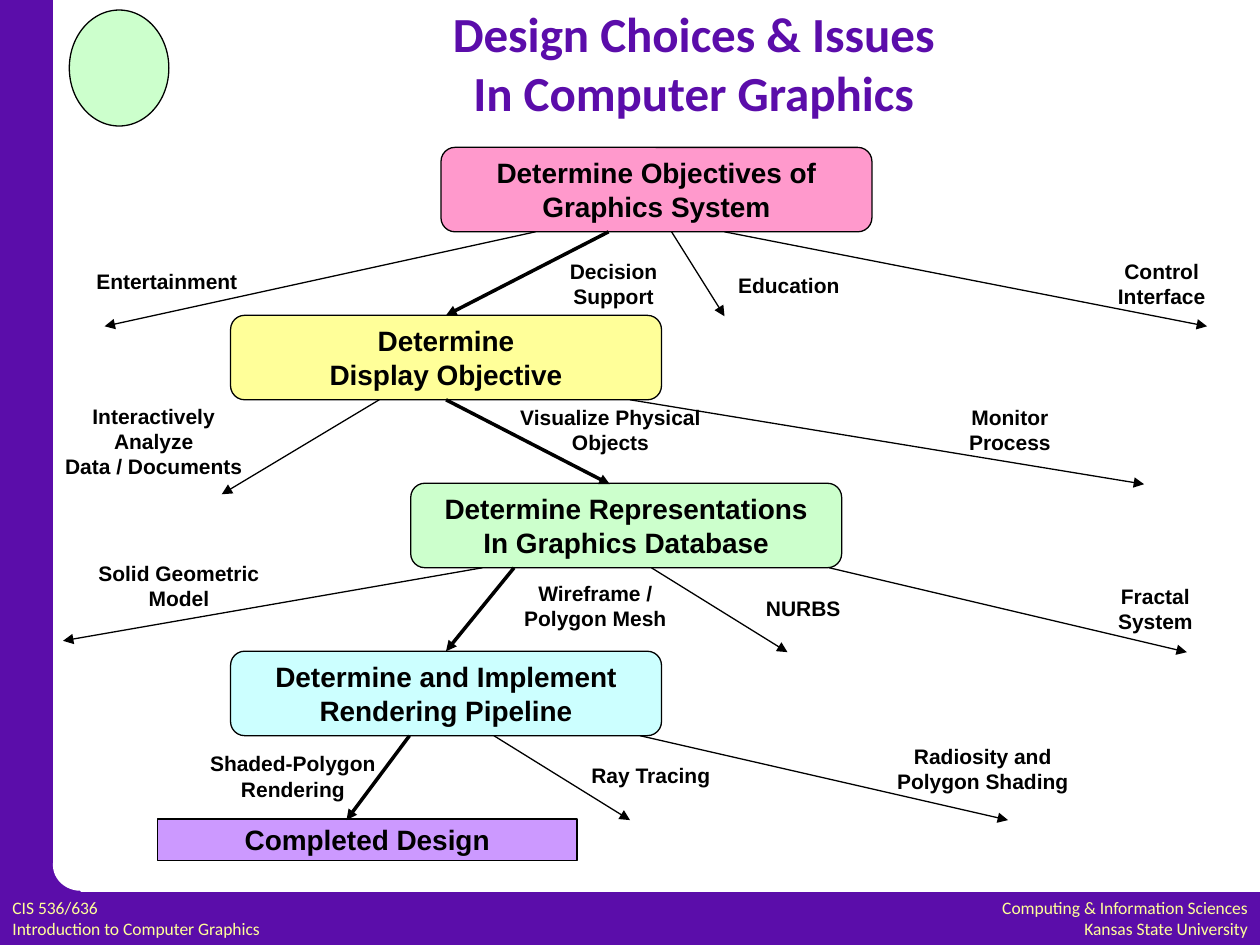
from pptx import Presentation
from pptx.dml.color import RGBColor
from pptx.enum.shapes import MSO_CONNECTOR, MSO_SHAPE
from pptx.enum.text import MSO_ANCHOR, PP_ALIGN
from pptx.oxml.ns import qn
from pptx.util import Inches, Pt
from lxml import etree

RECT, OVAL = MSO_SHAPE.RECTANGLE, MSO_SHAPE.OVAL
ROUND = MSO_SHAPE.FLOWCHART_ALTERNATE_PROCESS
STRAIGHT = MSO_CONNECTOR.STRAIGHT
LEFT, CENTER, RIGHT = PP_ALIGN.LEFT, PP_ALIGN.CENTER, PP_ALIGN.RIGHT
TOP, MIDDLE = MSO_ANCHOR.TOP, MSO_ANCHOR.MIDDLE

BLACK = RGBColor(0x00, 0x00, 0x00)
WHITE = RGBColor(0xFF, 0xFF, 0xFF)
PURPLE = RGBColor(0x5B, 0x0D, 0xAA)
CREAM = RGBColor(0xFF, 0xFF, 0x99)
PINK = RGBColor(0xFF, 0x99, 0xCC)
GREEN = RGBColor(0xCC, 0xFF, 0xCC)
CYAN = RGBColor(0xCC, 0xFF, 0xFF)
LILAC = RGBColor(0xCC, 0x99, 0xFF)

FIRST, PITCH, WIDE, HIGH = 1.17, 1.333, 3.42, 0.67

# Stage: left, fill, lines, arrows (from x, to x, drop), labels (left, top, width, lines).
# The arrow listed first is the chosen path to the next stage.
STAGES = [
    (3.5, PINK, ["Determine Objectives of", "Graphics System"],
     [(4.83, 3.5, 0.67), (4.25, 0.83, 0.75), (5.33, 5.75, 0.67),
      (5.75, 9.58, 0.75)],
     [(0.66, 2.08, 1.33, ["Entertainment"]),
      (4.42, 2, 0.9, ["Decision", "Support"]),
      (5.75, 2.11, 1.02, ["Education"]),
      (8.77, 2, 0.9, ["Control", "Interface"])]),
    (1.83, CREAM, ["Determine", "Display Objective"],
     [(3.58, 4.84, 0.67), (3.01, 1.76, 0.75), (5, 9.08, 0.67)],
     [(0.41, 3.15, 1.62, ["Interactively", "Analyze", "Data / Documents"]),
      (4.02, 3.16, 1.65, ["Visualize Physical", "Objects"]),
      (7.59, 3.16, 0.85, ["Monitor", "Process"])]),
    (3.26, GREEN, ["Determine Representations", "In Graphics Database"],
     [(4.08, 3.58, 0.67), (3.83, 0.5, 0.58), (5.17, 6.25, 0.67),
      (6.58, 9.42, 0.67)],
     [(0.67, 4.4, 1.5, ["Solid Geometric", "Model"]),
      (4.05, 4.56, 1.35, ["Wireframe /", "Polygon Mesh"]),
      (5.98, 4.68, 0.79, ["NURBS"]),
      (8.77, 4.58, 0.8, ["Fractal", "System"])]),
    (1.83, CYAN, ["Determine and Implement", "Rendering Pipeline"],
     [(3.25, 2.75, 0.67), (3.92, 5, 0.67), (5.08, 8, 0.67)],
     [(1.56, 5.91, 1.53, ["Shaded-Polygon", "Rendering"]),
      (4.59, 6, 1.15, ["Ray Tracing"]),
      (7.01, 5.85, 1.58, ["Radiosity and", "Polygon Shading"])]),
]


def write(frame, lines, size, font="Arial", color=BLACK, bold=True,
          align=CENTER, anchor=MIDDLE, wrap=False):
    """Fill a text frame with one paragraph per line."""
    frame.word_wrap = wrap
    frame.vertical_anchor = anchor
    for i, line in enumerate(lines):
        para = frame.add_paragraph() if i else frame.paragraphs[0]
        para.alignment = align
        run = para.add_run()
        run.text = line
        run.font.size, run.font.name, run.font.bold = Pt(size), font, bold
        run.font.color.rgb = color


def shape(slide, kind, x, y, w, h, fill, edge=None):
    """Add a filled preset shape, outlined only if an edge is given."""
    item = slide.shapes.add_shape(kind, Inches(x), Inches(y), Inches(w), Inches(h))
    item.shadow.inherit = False
    item.fill.solid()
    item.fill.fore_color.rgb = fill
    if edge is None:
        item.line.fill.background()
    else:
        item.line.color.rgb, item.line.width = edge, Pt(0.75)
    return item


def box(slide, kind, x, y, w, h, fill, lines):
    """Add an outlined box with a bold caption."""
    item = shape(slide, kind, x, y, w, h, fill, BLACK)
    write(item.text_frame, lines, 16)
    return item


def label(slide, x, y, w, h, lines, size, **style):
    """Add a text box."""
    item = slide.shapes.add_textbox(Inches(x), Inches(y), Inches(w), Inches(h))
    write(item.text_frame, lines, size, **style)


def arrow(slide, x1, y1, x2, y2, width):
    """Add a straight arrow."""
    item = slide.shapes.add_connector(
        STRAIGHT, Inches(x1), Inches(y1), Inches(x2), Inches(y2))
    item.line.color.rgb, item.line.width = BLACK, Pt(width)
    etree.SubElement(item.line._get_or_add_ln(), qn("a:tailEnd"), type="triangle")
    etree.SubElement(item._element.spPr, qn("a:effectLst"))
    return item


def near(x, item):
    """Tell whether x lies at the middle of a box."""
    return abs(Inches(x) - item.left - item.width / 2) < Inches(0.06)


def frame(slide):
    """Draw the purple border, emblem spot and footers."""
    shape(slide, RECT, 0, 7.08, 10, 0.42, PURPLE)
    shape(slide, RECT, 0, 0, 0.42, 7.5, PURPLE)
    shape(slide, RECT, 0.2, 6.85, 0.44, 0.44, PURPLE)
    shape(slide, OVAL, 0.42, 6.66, 0.44, 0.41, WHITE)
    shape(slide, OVAL, 0.55, 0.08, 0.79, 0.92, GREEN, BLACK)
    style = dict(font="Calibri", color=CREAM, bold=False, anchor=TOP)
    label(slide, 0, 7.07, 2.95, 0.43,
          ["CIS 536/636", "Introduction to Computer Graphics"], 10,
          align=LEFT, wrap=True, **style)
    label(slide, 7.18, 7.07, 2.82, 0.43,
          ["Computing & Information Sciences", "Kansas State University"], 10,
          align=RIGHT, wrap=True, **style)


def flow(slide):
    """Draw the stages, their arrows and the labels of the choices."""
    boxes = [box(slide, ROUND, x, FIRST + i * PITCH, WIDE, HIGH, fill, lines)
             for i, (x, fill, lines, _, _) in enumerate(STAGES)]
    boxes.append(box(slide, RECT, 1.25, 6.5, 3.33, 0.33, LILAC,
                     ["Completed Design"]))
    for i, (_, _, _, arrows, labels) in enumerate(STAGES):
        base = FIRST + i * PITCH + HIGH
        for j, (x1, x2, drop) in enumerate(arrows):
            line = arrow(slide, x1, base, x2, base + drop, 0.75 if j else 2)
            if near(x1, boxes[i]):
                line.begin_connect(boxes[i], 2)
            if j == 0 and near(x2, boxes[i + 1]):
                line.end_connect(boxes[i + 1], 0)
        for x, y, w, lines in labels:
            label(slide, x, y, w, 0.1 + 0.2 * len(lines), lines, 12)


def main():
    """Build the slide and save it."""
    deck = Presentation()
    deck.slide_width, deck.slide_height = Inches(10), Inches(7.5)
    slide = deck.slides.add_slide(deck.slide_layouts[6])
    frame(slide)
    flow(slide)
    label(slide, 1.17, 0.08, 8.67, 0.83,
          ["Design Choices & Issues", "In Computer Graphics"], 28,
          font="Calibri", color=PURPLE, wrap=True)
    deck.save("out.pptx")


if __name__ == "__main__":
    main()
